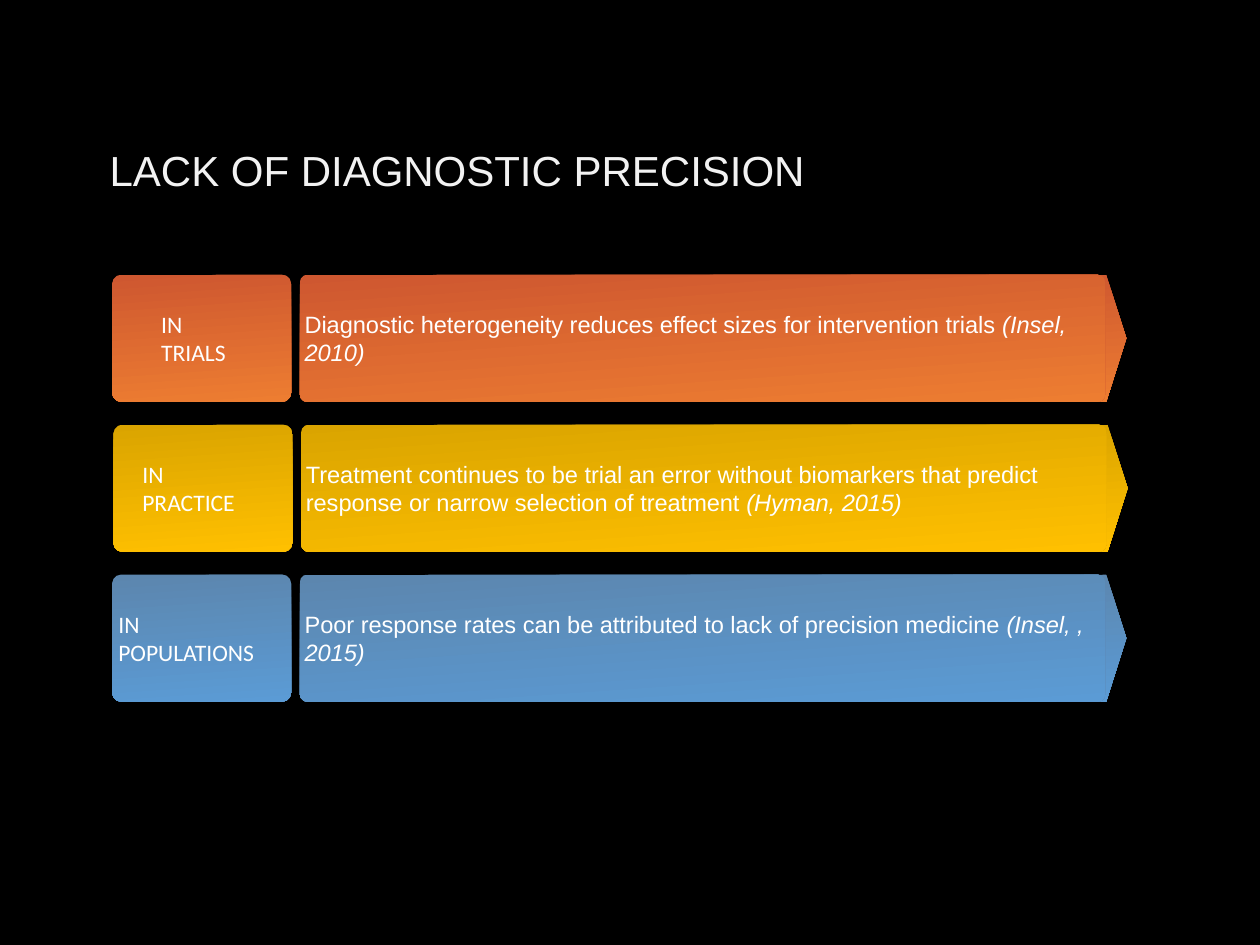
from pptx import Presentation
from pptx.dml.color import RGBColor
from pptx.enum import shapes, text
from pptx.util import Inches, Pt

BLACK = RGBColor(0x00, 0x00, 0x00)
WHITE = RGBColor(0xFF, 0xFF, 0xFF)
OFF_WHITE = RGBColor(0xF2, 0xF2, 0xF2)
ORANGE = (RGBColor(0xCE, 0x57, 0x30), RGBColor(0xED, 0x7D, 0x31))
GOLD = (RGBColor(0xDA, 0xA4, 0x00), RGBColor(0xFF, 0xC0, 0x00))
BLUE = (RGBColor(0x5C, 0x86, 0xAE), RGBColor(0x5B, 0x9B, 0xD5))

# Content
TITLE = "LACK OF DIAGNOSTIC PRECISION"
# setting, label left and width, finding, citation, gradient, row shift
ROWS = [
    ("TRIALS", 1.26, 0.56,
     "Diagnostic heterogeneity reduces effect sizes for intervention trials ",
     "(Insel, 2010)", ORANGE, 0),
    ("PRACTICE", 1.11, 0.79,
     "Treatment continues to be trial an error without biomarkers that predict "
     "response or narrow selection of treatment ",
     "(Hyman, 2015)", GOLD, 0.01),
    ("POPULATIONS", 0.92, 1.14,
     "Poor response rates can be attributed to lack of precision medicine ",
     "(Insel, , 2015)", BLUE, 0),
]

# Layout in inches
ROW_TOP, ROW_PITCH, ROW_HEIGHT = 2.18, 1.19, 1.01
TAG_LEFT, TAG_WIDTH = 0.89, 1.42
BAR_LEFT, BAR_WIDTH = 2.38, 6.39
TIP_LEFT, TIP_WIDTH = 8.01, 0.93
LABEL_HEIGHT = 0.5
INSET = Inches(0.02)

prs = Presentation()
prs.slide_width, prs.slide_height = Inches(10), Inches(7.5)
slide = prs.slides.add_slide(prs.slide_layouts[6])
slide.background.fill.solid()
slide.background.fill.fore_color.rgb = BLACK


def set_frame(frame, wrap=True):
    frame.word_wrap = wrap
    frame.vertical_anchor = text.MSO_ANCHOR.MIDDLE
    frame.margin_left = frame.margin_right = INSET
    frame.margin_top = frame.margin_bottom = INSET


def set_font(font, name, size, color):
    font.name, font.size = name, Pt(size)
    font.color.rgb = color


def add_block(kind, left, top, width, gradient, adjustments):
    block = slide.shapes.add_shape(kind, Inches(left), Inches(top),
                                   Inches(width), Inches(ROW_HEIGHT))
    block.shadow.inherit = False
    block.line.fill.background()
    block.fill.gradient()
    block.fill.gradient_angle = 274
    for stop, color in zip(block.fill.gradient_stops, gradient):
        stop.color.rgb = color
    for i, value in enumerate(adjustments):
        block.adjustments[i] = value
    return block


# Title
title = slide.shapes.add_textbox(Inches(0.35), Inches(1.12), Inches(8.62), Inches(0.45))
set_frame(title.text_frame)
title.text_frame.margin_left = Inches(0.52)
title.text_frame.text = TITLE
set_font(title.text_frame.paragraphs[0].runs[0].font, "Arial", 24, OFF_WHITE)

for row, (setting, label_left, label_width, finding, citation, gradient, shift) in enumerate(ROWS):
    top = ROW_TOP + row * ROW_PITCH

    # Arrow tip, tag and finding bar
    add_block(shapes.MSO_SHAPE.RIGHT_ARROW, TIP_LEFT + shift, top, TIP_WIDTH,
              gradient, (1, 0.172))
    add_block(shapes.MSO_SHAPE.ROUNDED_RECTANGLE, TAG_LEFT + shift, top, TAG_WIDTH,
              gradient, (0.072,))
    bar = add_block(shapes.MSO_SHAPE.ROUNDED_RECTANGLE, BAR_LEFT + shift, top, BAR_WIDTH,
                    gradient, (0.059,))
    set_frame(bar.text_frame)
    paragraph = bar.text_frame.paragraphs[0]
    paragraph.alignment = text.PP_ALIGN.LEFT
    for words, italic in ((finding, False), (citation, True)):
        run = paragraph.add_run()
        run.text = words
        set_font(run.font, "Arial", 13.5, WHITE)
        run.font.italic = italic

    # Label over the tag
    label_top = top + (ROW_HEIGHT - LABEL_HEIGHT) / 2
    label = slide.shapes.add_textbox(Inches(label_left), Inches(label_top),
                                     Inches(label_width), Inches(LABEL_HEIGHT))
    set_frame(label.text_frame, wrap=False)
    label.text_frame.text = "IN\n" + setting
    for paragraph in label.text_frame.paragraphs:
        set_font(paragraph.runs[0].font, "Calibri", 13.5, WHITE)

prs.save("out.pptx")
